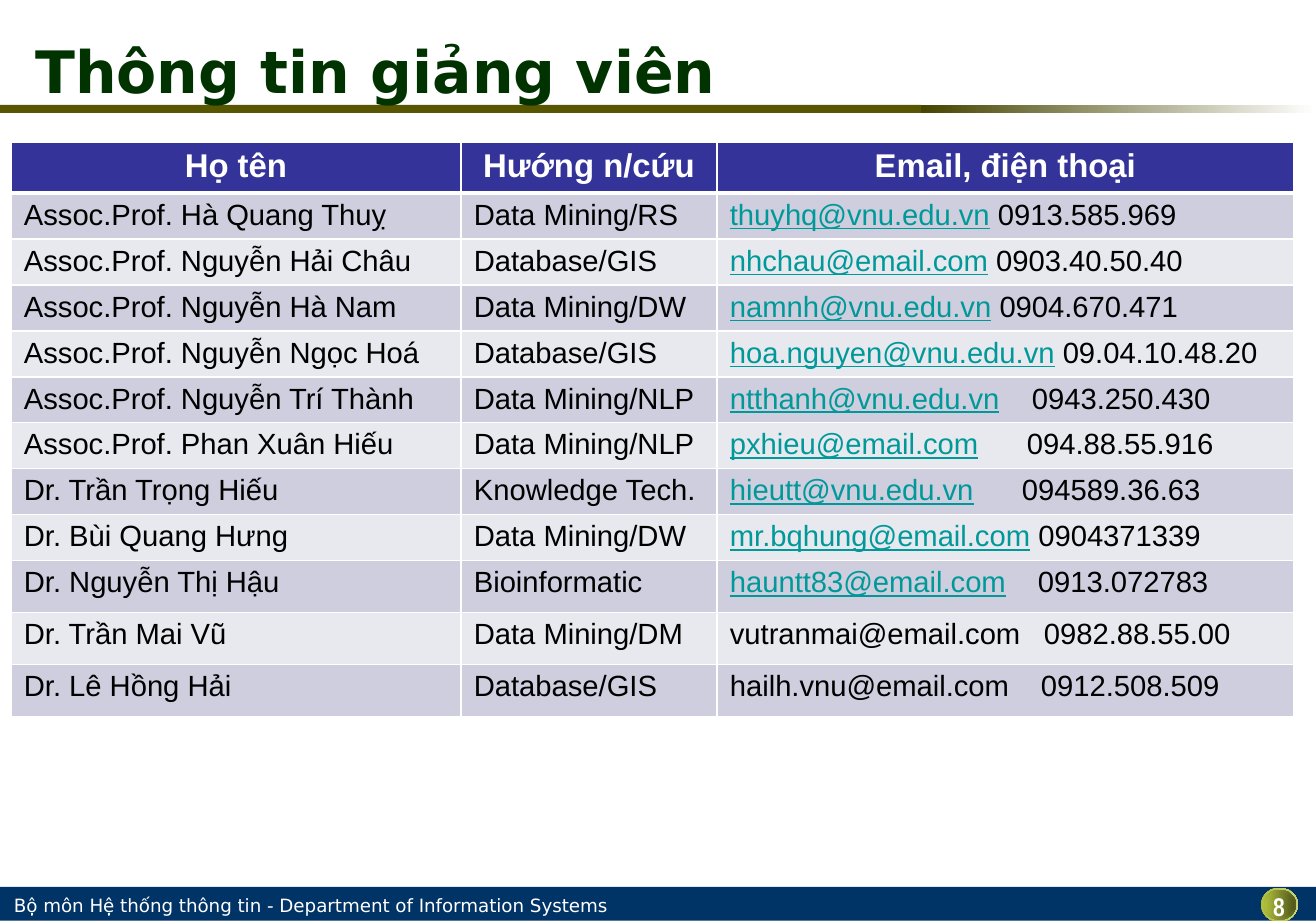
from lxml.etree import SubElement, Element
from pptx import Presentation
from pptx.dml.color import RGBColor
from pptx.enum.shapes import MSO_SHAPE as SHAPE
from pptx.enum.text import MSO_ANCHOR as ANCHOR, MSO_AUTO_SIZE as AUTOSIZE, PP_ALIGN as ALIGN
from pptx.oxml.ns import qn
from pptx.util import Inches, Pt

TITLE = "Thông tin giảng viên"
FOOTER = "Bộ môn Hệ thống thông tin - Department of Information Systems"
PAGE = "8"
HEADERS = ["Họ tên", "Hướng n/cứu", "Email, điện thoại"]
# name, field, email, phone, phone offset in the cell (0: right after the email)
LECTURERS = [
    ("Assoc.Prof. Hà Quang Thuỵ", "Data Mining/RS", "thuyhq@vnu.edu.vn", "0913.585.969", 0),
    ("Assoc.Prof. Nguyễn Hải Châu", "Database/GIS", "nhchau@email.com", "0903.40.50.40", 0),
    ("Assoc.Prof. Nguyễn Hà Nam", "Data Mining/DW", "namnh@vnu.edu.vn", "0904.670.471", 0),
    ("Assoc.Prof. Nguyễn Ngọc Hoá", "Database/GIS", "hoa.nguyen@vnu.edu.vn", "09.04.10.48.20", 0),
    ("Assoc.Prof. Nguyễn Trí Thành", "Data Mining/NLP", "ntthanh@vnu.edu.vn", "0943.250.430", 302),
    ("Assoc.Prof. Phan Xuân Hiếu", "Data Mining/NLP", "pxhieu@email.com", "094.88.55.916", 297),
    ("Dr. Trần Trọng Hiếu", "Knowledge Tech.", "hieutt@vnu.edu.vn", "094589.36.63", 292),
    ("Dr. Bùi Quang Hưng", "Data Mining/DW", "mr.bqhung@email.com", "0904371339", 0),
    ("Dr. Nguyễn Thị Hậu", "Bioinformatic", "hauntt83@email.com", "0913.072783", 308),
    ("Dr. Trần Mai Vũ", "Data Mining/DM", "vutranmai@email.com", "0982.88.55.00", 314),
    ("Dr. Lê Hồng Hải", "Database/GIS", "hailh.vnu@email.com", "0912.508.509", 311),
]
UNDERLINED = 9  # the first lecturers have an underlined email
COLORS = {
    "white": "FFFFFF", "black": "000000", "title": "003300", "link": "009999",
    "bar": "585600", "bar_dark": "464400", "footer": "003366", "header": "333399",
    "odd": "CECEDE", "even": "E8E8EF", "olive": "AFBE3C", "rim": "CAD47D",
    "shade": "5F6720", "shade2": "555C1D", "shade3": "51581C",
}
BADGE_LAYERS = [(0, "white"), (0, "rim"), (2, "shade"), (2, "shade2"), (4, "shade3")]
BADGE = (1261, 888, 37, 34)
COL_WIDTHS = [450, 256, 577]
ROW_HEIGHTS = [51] + [46] * 8 + [52] * 3
TABLE_LEFT, TABLE_TOP = 11, 142
SCALE = 914400 / 131.6


def px(n):
    return round(n * SCALE)


def rgb(name):
    return RGBColor.from_string(COLORS[name])


def style(r, size, color, font="Arial", bold=False, underline=False):
    f = r.font
    f.size, f.name, f.bold, f.underline = Pt(size), font, bold, underline
    f.color.rgb = rgb(color)


def add_filled(slide, kind, box, *colors):
    """Add a borderless shape, with a gradient when two colours are given."""
    sp = slide.shapes.add_shape(kind, *map(px, box))
    sp.shadow.inherit = False
    sp.line.fill.background()
    if len(colors) == 1:
        sp.fill.solid()
        sp.fill.fore_color.rgb = rgb(colors[0])
        return
    sp.fill.gradient()
    sp.fill.gradient_angle = 0
    for position, (stop, color) in enumerate(zip(sp.fill.gradient_stops, colors)):
        stop.position = position
        stop.color.rgb = rgb(color)


def add_label(slide, box, text, size, font, align, bold=False, side=0):
    tf = slide.shapes.add_textbox(*map(px, box)).text_frame
    tf.word_wrap = True
    tf.margin_left = tf.margin_right = px(side)
    tf.margin_top = tf.margin_bottom = 0
    tf.vertical_anchor = ANCHOR.MIDDLE
    p = tf.paragraphs[0]
    p.text, p.alignment = text, align
    style(p.runs[0], size, "white", font, bold)


def set_borders(cell, **widths):
    tc_pr = cell._tc.get_or_add_tcPr()
    for i, side in enumerate("LRTB"):
        ln = Element(qn(f"a:ln{side}"), w=str(Pt(widths.get(side, 1))))
        SubElement(SubElement(ln, qn("a:solidFill")), qn("a:srgbClr"), val=COLORS["white"])
        tc_pr.insert(i, ln)


def add_phone(p, phone, offset):
    r = p.add_run()
    r.text = ("\t" if offset else " ") + phone
    style(r, 16, "black")
    if offset:
        tabs = SubElement(p._p.get_or_add_pPr(), qn("a:tabLst"))
        SubElement(tabs, qn("a:tab"), pos=str(px(offset)), algn="l")


def add_lecturer_table(slide):
    rows = [HEADERS] + [lecturer[:3] for lecturer in LECTURERS]
    table = slide.shapes.add_table(
        len(rows), len(HEADERS), px(TABLE_LEFT), px(TABLE_TOP),
        px(sum(COL_WIDTHS)), px(sum(ROW_HEIGHTS))).table
    for column, width in zip(table.columns, COL_WIDTHS):
        column.width = px(width)
    for i, (texts, height) in enumerate(zip(rows, ROW_HEIGHTS)):
        table.rows[i].height = px(height)
        for j, text in enumerate(texts):
            cell = table.cell(i, j)
            cell.margin_left = cell.margin_right = px(13)
            cell.margin_top = cell.margin_bottom = px(6)
            cell.fill.solid()
            cell.fill.fore_color.rgb = rgb("header" if i == 0 else "odd" if i % 2 else "even")
            set_borders(cell, T=3 if i == 1 else 1, B=3 if i == 0 else 1)
            p = cell.text_frame.paragraphs[0]
            p.text = text
            if i == 0:
                p.alignment = ALIGN.CENTER
                style(p.runs[0], 18, "white", bold=True)
                continue
            link = j == 2 and i <= UNDERLINED
            style(p.runs[0], 16, "link" if link else "black", underline=link)
            if j == 2:
                add_phone(p, *LECTURERS[i - 1][3:])


def main():
    prs = Presentation()
    prs.slide_width, prs.slide_height = Inches(10), Inches(7)
    slide = prs.slides.add_slide(prs.slide_layouts[5])

    add_filled(slide, SHAPE.RECTANGLE, (0, 105, 921, 8), "bar")
    add_filled(slide, SHAPE.RECTANGLE, (921, 105, 395, 8), "bar_dark", "white")
    add_filled(slide, SHAPE.RECTANGLE, (0, 887, 1316, 34), "footer")
    add_label(slide, (11, 894, 958, 22), FOOTER, 10, "DejaVu Sans", ALIGN.LEFT, side=3)
    x, y, w, h = BADGE
    for inset, color in BADGE_LAYERS:
        box = (x + inset, y + inset, w - 2 * inset, h - 2 * inset)
        add_filled(slide, SHAPE.OVAL, box, "olive", color)
    add_label(slide, (1246, 891, 66, 30), PAGE, 14, "Arial Narrow", ALIGN.CENTER, bold=True)

    title = slide.shapes.title
    title.left, title.top, title.width, title.height = map(px, (22, 26, 1261, 88))
    tf = title.text_frame
    tf.text = TITLE
    tf.auto_size = AUTOSIZE.NONE
    tf.vertical_anchor = ANCHOR.MIDDLE
    tf.paragraphs[0].alignment = ALIGN.LEFT
    style(tf.paragraphs[0].runs[0], 32, "title", "DejaVu Sans", bold=True)
    slide.shapes._spTree.append(title._element)  # bring in front of the bars

    add_lecturer_table(slide)
    prs.save("out.pptx")


if __name__ == "__main__":
    main()
